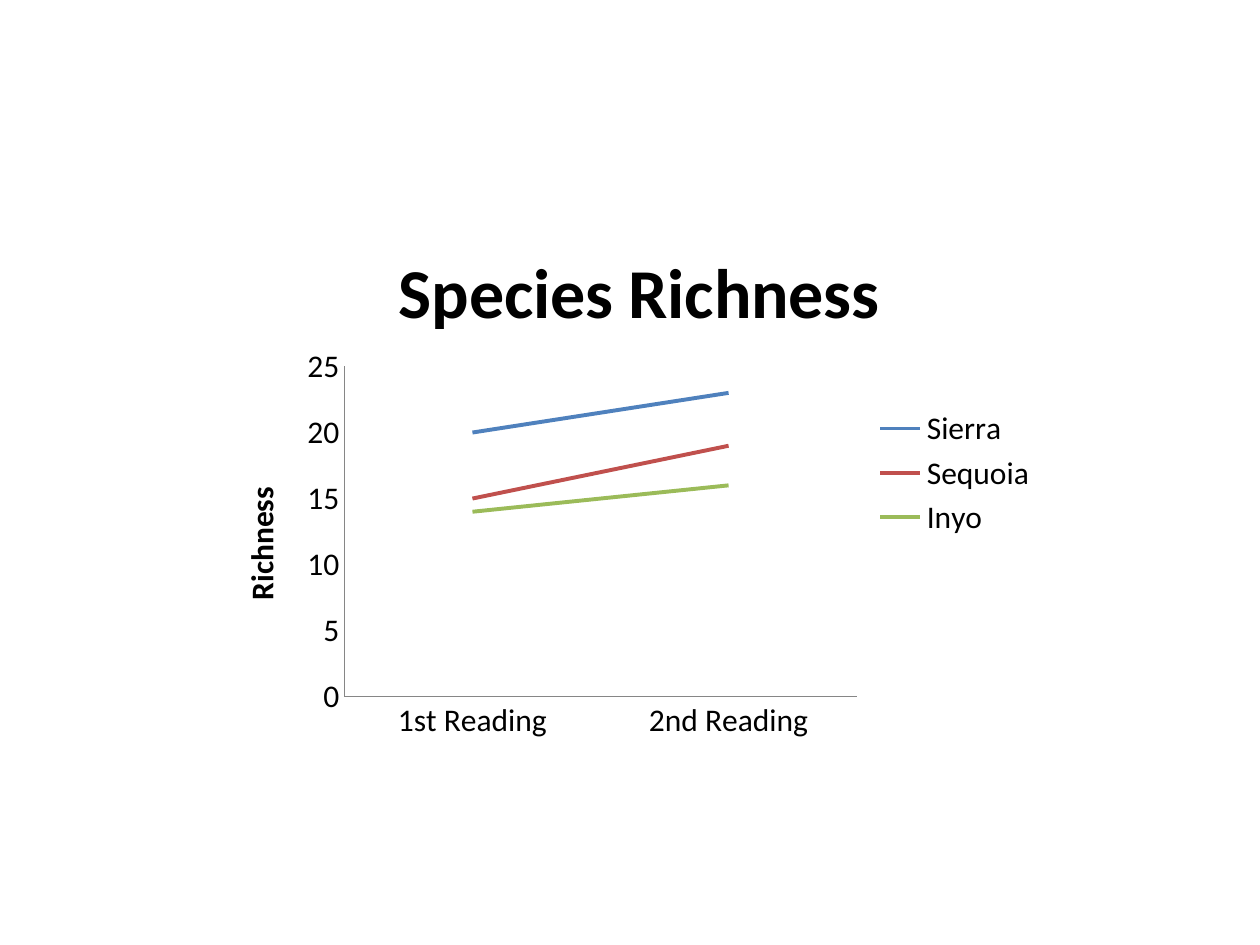
from lxml import etree
from pptx import Presentation
from pptx.chart.data import CategoryChartData as ChartData
from pptx.dml.color import RGBColor
from pptx.enum.chart import XL_CHART_TYPE as ChartType
from pptx.enum.chart import XL_LEGEND_POSITION as LegendPosition
from pptx.enum.chart import XL_TICK_MARK as TickMark
from pptx.oxml.ns import qn
from pptx.util import Pt

PX = 914400 // 126


def color(value):
    return RGBColor.from_string(value)


def place(parent, **values):
    """Give a chart part a manual layout, in fractions of the chart."""
    layout = parent.get_or_add_layout() if hasattr(parent, "get_or_add_layout") else parent.find(qn("c:layout"))
    for child in list(layout):
        layout.remove(child)
    manual = etree.SubElement(layout, qn("c:manualLayout"))
    for name, value in values.items():
        etree.SubElement(manual, qn(f"c:{name}")).set("val", str(value))


deck = Presentation()
deck.slide_width, deck.slide_height = 10 * 914400, 7 * 914400 + 457200
page = deck.slides.add_slide(deck.slide_layouts[6])

# Richness readings
data = ChartData()
data.categories = ["1st Reading", "2nd Reading"]
forests = [
    ("Sierra", (20, 23), "4F81BD"),
    ("Sequoia", (15, 19), "C0504D"),
    ("Inyo", (14, 16), "9BBB59"),
]
for name, readings, _ in forests:
    data.add_series(name, readings)
chart = page.shapes.add_chart(
    ChartType.LINE, 210 * PX, 193 * PX, 840 * PX, 560 * PX, data
).chart
chart.font.name = "Calibri"
chart.font.size = Pt(18)
chart.font.color.rgb = color("000000")

# Lines
chart.plots[0].vary_by_categories = False
for series, (_, _, line_color) in zip(chart.plots[0].series, forests):
    series.smooth = False
    series.format.line.width = Pt(2.25)
    series.format.line.color.rgb = color(line_color)

# Axes
axis_format = {
    "major_tick_mark": TickMark.NONE,
    "minor_tick_mark": TickMark.NONE,
    "has_major_gridlines": False,
}
for axis in (chart.category_axis, chart.value_axis):
    for name, value in axis_format.items():
        setattr(axis, name, value)
    axis.format.line.width = Pt(0.75)
    axis.format.line.color.rgb = color("868686")
scale_format = {"minimum_scale": 0, "maximum_scale": 25, "major_unit": 5}
for name, value in scale_format.items():
    setattr(chart.value_axis, name, value)

# Chart and axis titles
chart.has_title = True
for title, text, size in (
    (chart.chart_title, "Species Richness", 40),
    (chart.value_axis.axis_title, "Richness", 18),
):
    title.text_frame.text = text
    font = title.text_frame.paragraphs[0].runs[0].font
    for name, value in {"name": "Calibri", "size": Pt(size), "bold": True}.items():
        setattr(font, name, value)
    font.color.rgb = color("000000")

# Legend
chart.has_legend = True
chart.legend.position = LegendPosition.RIGHT
chart.legend.include_in_layout = False

# Positions of title and plot
title_element = chart.chart_title._element
if title_element.find(qn("c:layout")) is None:
    title_element.find(qn("c:tx")).addnext(etree.Element(qn("c:layout")))
place(title_element, xMode="edge", yMode="edge", x=0.21, y=0.07)

plot_area = chart._chartSpace.chart.plotArea
if plot_area.find(qn("c:layout")) is None:
    plot_area.insert(0, etree.Element(qn("c:layout")))
place(plot_area, layoutTarget="inner", xMode="edge", yMode="edge",
      x=0.16, y=0.31, w=0.61, h=0.59)

deck.save("out.pptx")
